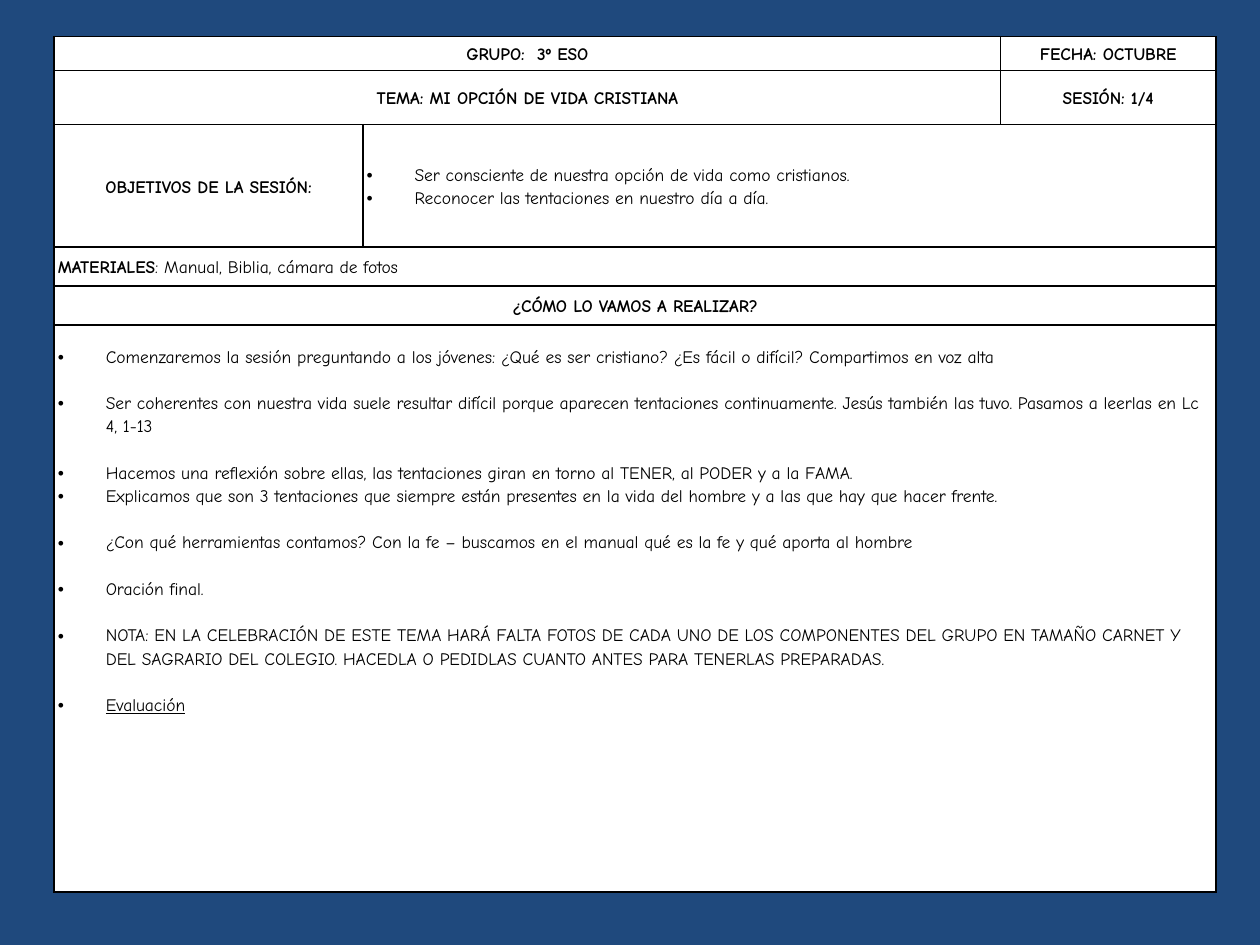
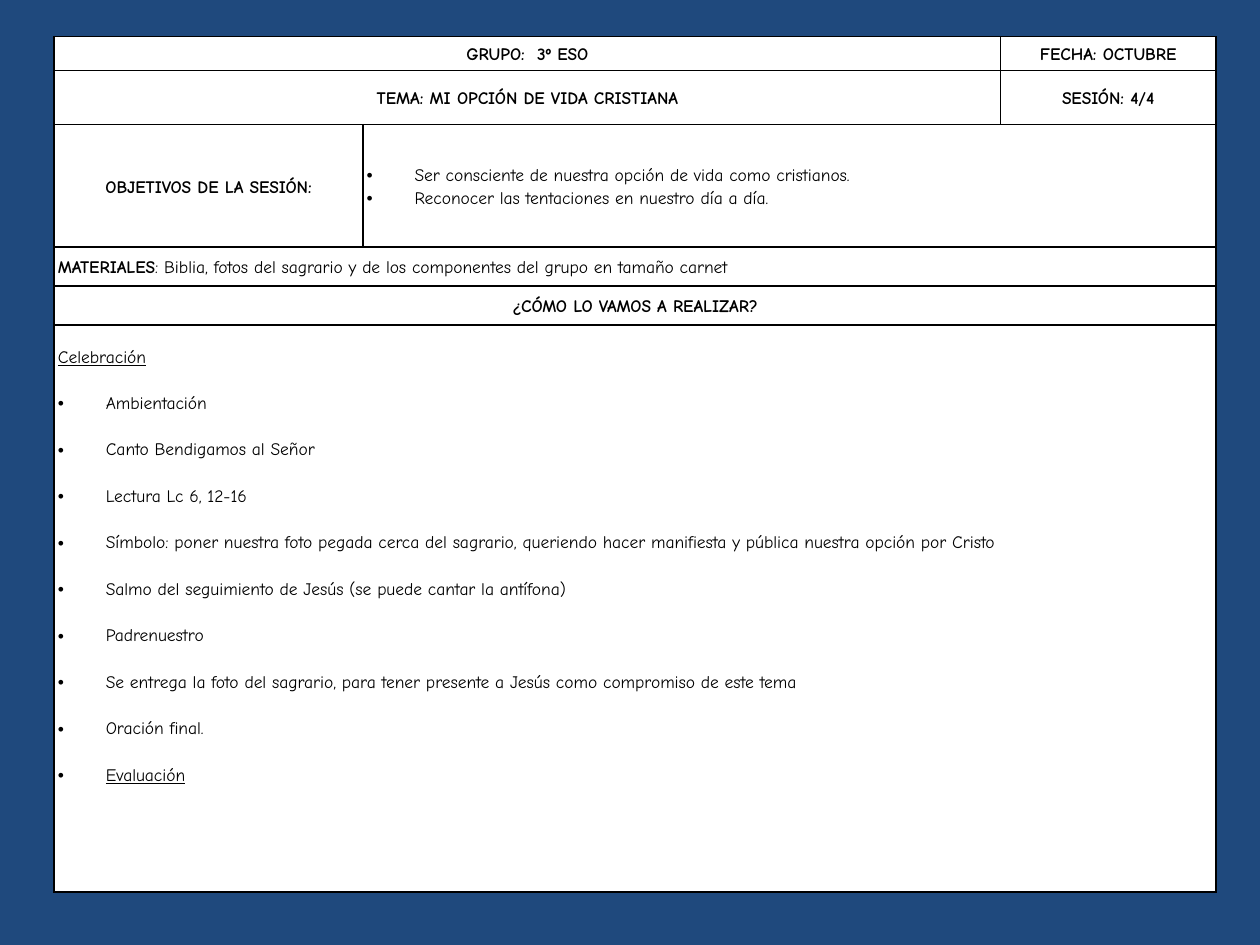
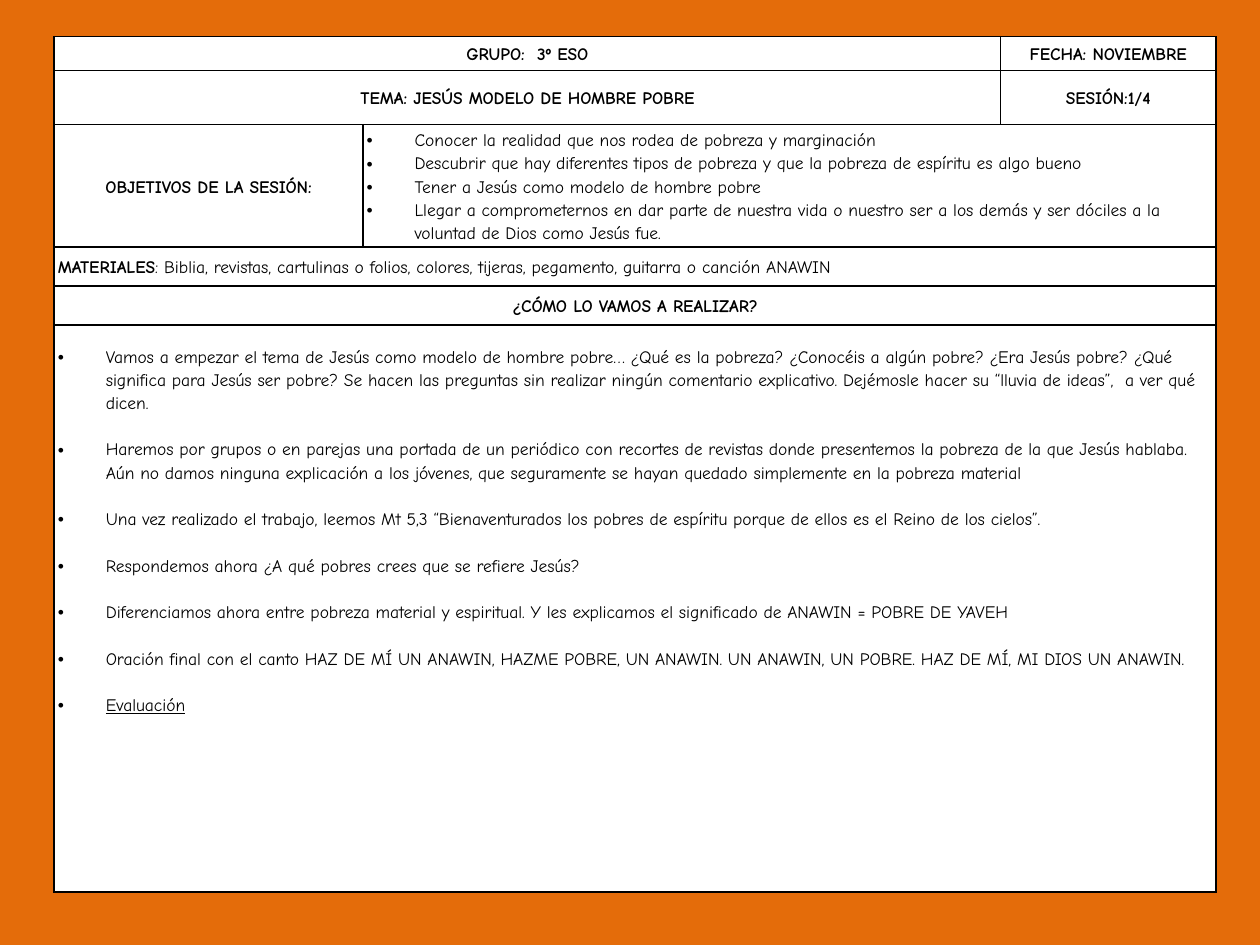
from lxml import etree
from pptx import Presentation
from pptx.dml.color import RGBColor
from pptx.enum.text import MSO_ANCHOR, PP_ALIGN
from pptx.oxml.ns import qn
from pptx.util import Inches, Pt

CENTER, LEFT = PP_ALIGN.CENTER, PP_ALIGN.LEFT
MIDDLE, TOP = MSO_ANCHOR.MIDDLE, MSO_ANCHOR.TOP
BLUE = RGBColor(0x1F, 0x49, 0x7D)
ORANGE = RGBColor(0xE4, 0x6C, 0x0A)
WHITE = RGBColor(0xFF, 0xFF, 0xFF)
BLACK = RGBColor(0, 0, 0)
FONT = {"name": "Comic Neue", "size": Pt(10)}
COLUMN_WIDTHS = [2.45, 5.06, 1.71]
ROW_HEIGHTS = [0.27, 0.43, 0.97, 0.31, 0.31, 4.5]
SPANS = [((0, 0), (0, 1)), ((1, 0), (1, 1)), ((2, 1), (2, 2)),
         ((3, 0), (3, 2)), ((4, 0), (4, 2)), ((5, 0), (5, 2))]
CELL_FORMAT = {"vertical_anchor": MIDDLE, "margin_left": Inches(0.03),
               "margin_right": Inches(0.03), "margin_top": 0, "margin_bottom": 0}
STEP_GAP = Pt(13.3)
STEPS_TOP_MARGIN = Pt(11)
INDENT = Inches(0.38)
UNDERLINED = ["Celebración", "Evaluación"]
UNBULLETED = ["Celebración"]

CHRISTIAN_LIFE = {
    "background": BLUE,
    "date": "FECHA: OCTUBRE",
    "topic": "TEMA: MI OPCIÓN DE VIDA CRISTIANA",
    "goals": ["Ser consciente de nuestra opción de vida como cristianos.",
              "Reconocer las tentaciones en nuestro día a día."],
}
# Each step is followed by a gap; lines inside one step stay together.
SESSIONS = [
    {
        **CHRISTIAN_LIFE,
        "session": "SESIÓN: 1/4",
        "materials": ": Manual, Biblia, cámara de fotos",
        "steps": [
            "Comenzaremos la sesión preguntando a los jóvenes: ¿Qué es ser cristiano? "
            "¿Es fácil o difícil? Compartimos en voz alta",
            "Ser coherentes con nuestra vida suele resultar difícil porque aparecen tentaciones "
            "continuamente. Jesús también las tuvo. Pasamos a leerlas en Lc 4, 1-13",
            "Hacemos una reflexión sobre ellas, las tentaciones giran en torno al TENER, "
            "al PODER y a la FAMA.\n"
            "Explicamos que son 3 tentaciones que siempre están presentes en la vida del hombre "
            "y a las que hay que hacer frente.",
            "¿Con qué herramientas contamos? Con la fe – buscamos en el manual qué es la fe "
            "y qué aporta al hombre",
            "Oración final.",
            "NOTA: EN LA CELEBRACIÓN DE ESTE TEMA HARÁ FALTA FOTOS DE CADA UNO DE LOS "
            "COMPONENTES DEL GRUPO EN TAMAÑO CARNET Y DEL SAGRARIO DEL COLEGIO. HACEDLA O "
            "PEDIDLAS CUANTO ANTES PARA TENERLAS PREPARADAS.",
            "Evaluación",
        ],
    },
    {
        **CHRISTIAN_LIFE,
        "session": "SESIÓN: 4/4",
        "materials": ": Biblia, fotos del sagrario y de los componentes del grupo en tamaño carnet",
        "steps": [
            "Celebración",
            "Ambientación",
            "Canto Bendigamos al Señor",
            "Lectura Lc 6, 12-16",
            "Símbolo: poner nuestra foto pegada cerca del sagrario, queriendo hacer manifiesta "
            "y pública nuestra opción por Cristo",
            "Salmo del seguimiento de Jesús (se puede cantar la antífona)",
            "Padrenuestro",
            "Se entrega la foto del sagrario, para tener presente a Jesús como compromiso "
            "de este tema",
            "Oración final.",
            "Evaluación",
        ],
    },
    {
        "background": ORANGE,
        "date": "FECHA: NOVIEMBRE",
        "topic": "TEMA: JESÚS MODELO DE HOMBRE POBRE",
        "session": "SESIÓN:1/4",
        "goals": [
            "Conocer la realidad que nos rodea de pobreza y marginación",
            "Descubrir que hay diferentes tipos de pobreza y que la pobreza de espíritu es algo bueno",
            "Tener a Jesús como modelo de hombre pobre",
            "Llegar a comprometernos en dar parte de nuestra vida o nuestro ser a los demás "
            "y ser dóciles a la voluntad de Dios como Jesús fue.",
        ],
        "materials": ": Biblia, revistas, cartulinas o folios, colores, tijeras, pegamento, "
                     "guitarra o canción ANAWIN",
        "steps": [
            "Vamos a empezar el tema de Jesús como modelo de hombre pobre… ¿Qué es la pobreza? "
            "¿Conocéis a algún pobre? ¿Era Jesús pobre? ¿Qué significa para Jesús ser pobre? "
            "Se hacen las preguntas sin realizar ningún comentario explicativo. Dejémosle hacer "
            "su “lluvia de ideas”,  a ver qué dicen.",
            "Haremos por grupos o en parejas una portada de un periódico con recortes de revistas "
            "donde presentemos la pobreza de la que Jesús hablaba. Aún no damos ninguna "
            "explicación a los jóvenes, que seguramente se hayan quedado simplemente en la "
            "pobreza material",
            "Una vez realizado el trabajo, leemos Mt 5,3 “Bienaventurados los pobres de espíritu "
            "porque de ellos es el Reino de los cielos”.",
            "Respondemos ahora ¿A qué pobres crees que se refiere Jesús?",
            "Diferenciamos ahora entre pobreza material y espiritual. Y les explicamos el "
            "significado de ANAWIN = POBRE DE YAVEH",
            "Oración final con el canto HAZ DE MÍ UN ANAWIN, HAZME POBRE, UN ANAWIN. "
            "UN ANAWIN, UN POBRE. HAZ DE MÍ, MI DIOS UN ANAWIN.",
            "Evaluación",
        ],
    },
]


def format_cell(cell):
    """Give a cell its margins, black borders and white fill."""
    for name, value in CELL_FORMAT.items():
        setattr(cell, name, value)
    properties = cell._tc.get_or_add_tcPr()
    for side in ("a:lnL", "a:lnR", "a:lnT", "a:lnB"):
        line = etree.SubElement(properties, qn(side), w=str(Pt(1)))
        fill = etree.SubElement(line, qn("a:solidFill"))
        etree.SubElement(fill, qn("a:srgbClr"), val=str(BLACK))
    cell.fill.solid()
    cell.fill.fore_color.rgb = WHITE


def add_paragraph(cell, runs, alignment=LEFT, gap=0, listed=False):
    """Add a paragraph of (text, bold) runs, using the empty first one if free."""
    frame = cell.text_frame
    paragraph = frame.paragraphs[0] if not frame.text else frame.add_paragraph()
    paragraph.alignment = alignment
    paragraph.line_spacing = 1.15
    paragraph.space_after = gap
    for text, bold in runs:
        run = paragraph.add_run()
        run.text = text
        for name, value in FONT.items():
            setattr(run.font, name, value)
        run.font.bold = bold
        run.font.underline = text in UNDERLINED
        run.font.color.rgb = BLACK
    if listed:
        properties = paragraph._p.get_or_add_pPr()
        properties.set("marL", str(INDENT))
        properties.set("indent", str(-INDENT))
        if runs[0][0] not in UNBULLETED:
            etree.SubElement(properties, qn("a:buFont"), typeface="Arial")
            etree.SubElement(properties, qn("a:buChar"), char="•")


presentation = Presentation()
presentation.slide_width = Inches(10)
presentation.slide_height = Inches(7.5)

for session in SESSIONS:
    slide = presentation.slides.add_slide(presentation.slide_layouts[6])
    slide.background.fill.solid()
    slide.background.fill.fore_color.rgb = session["background"]

    table = slide.shapes.add_table(
        len(ROW_HEIGHTS), len(COLUMN_WIDTHS), Inches(0.43), Inches(0.29),
        Inches(sum(COLUMN_WIDTHS)), Inches(sum(ROW_HEIGHTS))).table
    table.first_row = table.horz_banding = False
    for column, width in zip(table.columns, COLUMN_WIDTHS):
        column.width = Inches(width)
    for row, height in zip(table.rows, ROW_HEIGHTS):
        row.height = Inches(height)
    for cell in table.iter_cells():
        format_cell(cell)
    for first, last in SPANS:
        table.cell(*first).merge(table.cell(*last))

    headings = {
        (0, 0): "GRUPO:  3º ESO",
        (0, 2): session["date"],
        (1, 0): session["topic"],
        (1, 2): session["session"],
        (2, 0): "OBJETIVOS DE LA SESIÓN:",
        (4, 0): "¿CÓMO LO VAMOS A REALIZAR?",
    }
    for position, heading in headings.items():
        add_paragraph(table.cell(*position), [(heading, True)], CENTER)
    for goal in session["goals"]:
        add_paragraph(table.cell(2, 1), [(goal, False)], listed=True)
    add_paragraph(table.cell(3, 0), [("MATERIALES", True), (session["materials"], False)])

    steps_cell = table.cell(5, 0)
    steps_cell.vertical_anchor = TOP
    steps_cell.margin_top = STEPS_TOP_MARGIN
    for step in session["steps"]:
        lines = step.split("\n")
        for number, line in enumerate(lines, start=1):
            gap = STEP_GAP if number == len(lines) else 0
            add_paragraph(steps_cell, [(line, False)], gap=gap, listed=True)

presentation.save("out.pptx")
